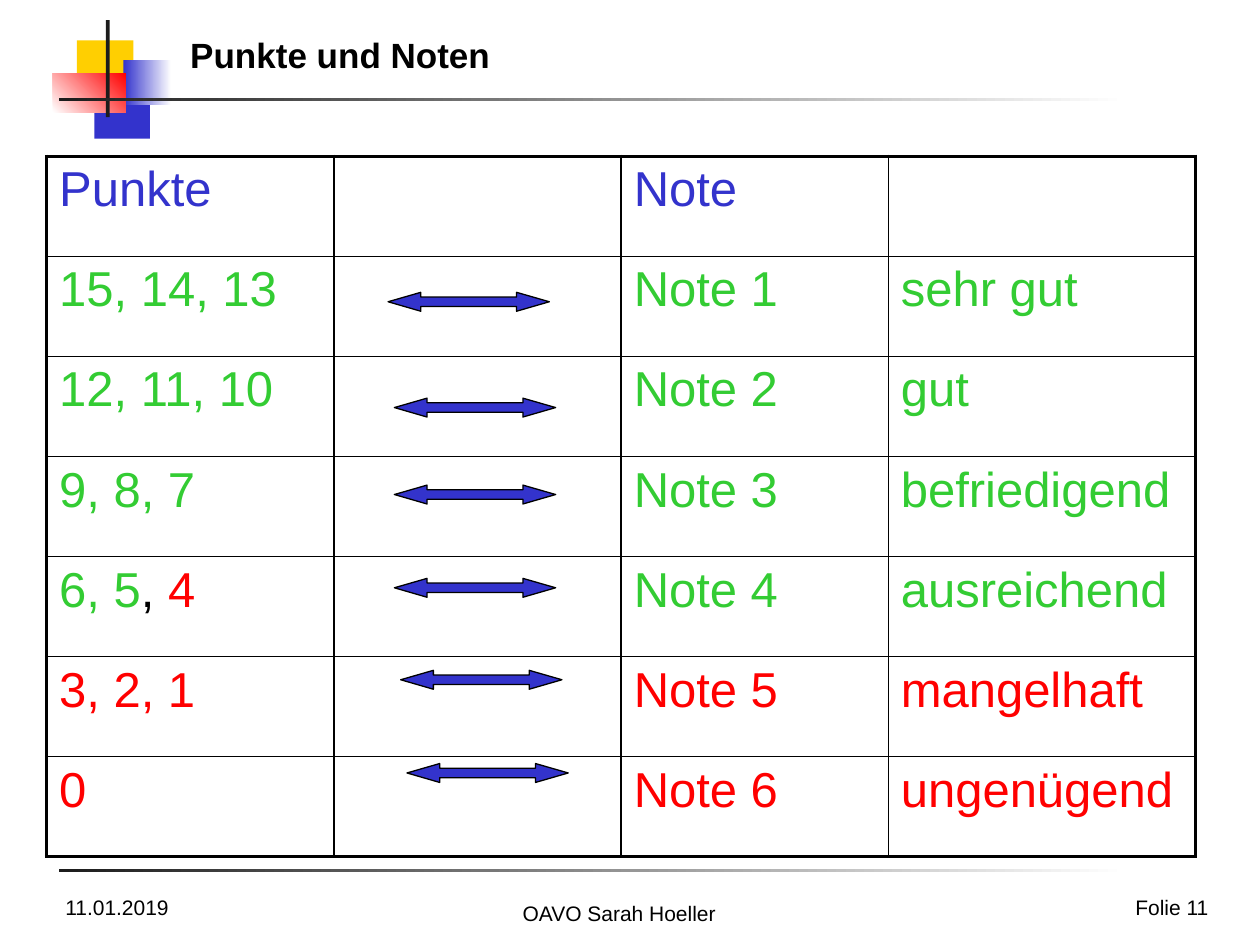
from dataclasses import dataclass
from typing import Optional

from lxml.etree import SubElement
from pptx import Presentation
from pptx.dml.color import RGBColor as RGB
from pptx.enum.shapes import MSO_SHAPE as Shape
from pptx.enum.text import MSO_ANCHOR as Anchor, PP_ALIGN as Align
from pptx.oxml.ns import qn
from pptx.util import Inches, Pt


@dataclass(frozen=True)
class Theme:
    font: str = "Arial"
    black: str = "000000"
    dark: str = "1C1C1C"
    white: str = "FFFFFF"
    yellow: str = "FFCF01"
    blue: str = "3333CC"
    red: str = "FF0000"
    green: str = "33CC33"
    footer_size: float = 12
    title_size: float = 20
    table_size: float = 28
    outer_line: float = 2.25
    inner_line: float = 1


@dataclass(frozen=True)
class Block:
    left: float
    top: float
    width: float
    height: float
    color: str
    fade_to: Optional[str] = None
    angle: float = 0


@dataclass(frozen=True)
class Footer:
    text: str
    left: float
    top: float
    width: float
    height: float
    align: Align


@dataclass(frozen=True)
class Grade:
    points: list
    note: str
    label: str
    color: str
    arrow_left: float
    arrow_top: float


T = Theme()

BLOCKS = [
    Block(0.61, 0.32, 0.45, 0.35, T.yellow),
    Block(0.85, 0.72, 0.34, 0.35, T.yellow, T.white),
    Block(0.75, 0.75, 0.44, 0.35, T.blue),
    Block(0.98, 0.48, 0.38, 0.35, T.blue, T.white),
    Block(0.42, 0.58, 0.58, 0.31, T.white, T.red, 45),
    Block(0.84, 0.16, 0.03, 0.77, T.dark),
    *(Block(0.47, top, 8.47, 0.02, T.dark, T.white) for top in (0.78, 6.9)),
]

FOOTERS = [
    Footer("Folie 11", 7.36, 7.05, 2.33, 0.22, Align.RIGHT),
    Footer("11.01.2019", 0.42, 7.05, 2.33, 0.3, Align.LEFT),
    Footer("OAVO Sarah Hoeller", 3.33, 7.1, 3.17, 0.24, Align.CENTER),
]

GRADES = [
    Grade([("15, 14, 13", T.green)], "Note 1", "sehr gut", T.green, 3.08, 2.32),
    Grade([("12, 11, 10", T.green)], "Note 2", "gut", T.green, 3.13, 3.16),
    Grade([("9, 8, 7", T.green)], "Note 3", "befriedigend", T.green, 3.13, 3.85),
    Grade([("6, 5", T.green), (", ", T.black), ("4", T.red)],
          "Note 4", "ausreichend", T.green, 3.13, 4.59),
    Grade([("3, 2, 1", T.red)], "Note 5", "mangelhaft", T.red, 3.18, 5.32),
    Grade([("0", T.red)], "Note 6", "ungenügend", T.red, 3.23, 6.06),
]

TABLE_LEFT, TABLE_TOP, TABLE_HEIGHT = 0.37, 1.24, 5.56
COLUMNS = [2.28, 2.28, 2.12, 2.44]


def add_run(p, text: str, *, size: float, color: str = T.black,
            bold: bool = False, align: Align = Align.LEFT) -> None:
    p.alignment = align
    r = p.add_run()
    r.text = text
    r.font.name, r.font.size, r.font.bold = T.font, Pt(size), bold
    r.font.color.rgb = RGB.from_string(color)


def fill_solid(sp, color: str) -> None:
    sp.fill.solid()
    sp.fill.fore_color.rgb = RGB.from_string(color)


def draw_block(slide, b: Block) -> None:
    sp = slide.shapes.add_shape(Shape.RECTANGLE, Inches(b.left), Inches(b.top),
                                Inches(b.width), Inches(b.height))
    sp.shadow.inherit = False
    sp.line.fill.background()
    if b.fade_to is None:
        fill_solid(sp, b.color)
        return
    sp.fill.gradient()
    sp.fill.gradient_angle = b.angle
    for stop, color in zip(sp.fill.gradient_stops, (b.color, b.fade_to)):
        stop.color.rgb = RGB.from_string(color)


def draw_footer(slide, f: Footer) -> None:
    tf = slide.shapes.add_textbox(Inches(f.left), Inches(f.top),
                                  Inches(f.width), Inches(f.height)).text_frame
    tf.word_wrap = True
    add_run(tf.paragraphs[0], f.text, size=T.footer_size, align=f.align)


def draw_title(slide, text: str) -> None:
    sp = slide.shapes.title
    sp.left, sp.top, sp.width, sp.height = map(Inches, (1.41, 0.31, 7.19, 0.34))
    fill_solid(sp, T.white)
    sp.text_frame.vertical_anchor = Anchor.BOTTOM
    add_run(sp.text_frame.paragraphs[0], text, size=T.title_size, bold=True)


def set_borders(cell, outer: dict) -> None:
    """Draw all four sides; outer tells which lie on the table's edge."""
    for side, is_outer in outer.items():
        width = T.outer_line if is_outer else T.inner_line
        ln = SubElement(cell._tc.get_or_add_tcPr(), qn(f"a:ln{side}"), w=str(Pt(width)))
        SubElement(SubElement(ln, qn("a:solidFill")), qn("a:srgbClr"), val=T.black)


def draw_table(slide) -> None:
    rows = [[[("Punkte", T.blue)], [], [("Note", T.blue)], []]]
    rows += [[g.points, [], [(g.note, g.color)], [(g.label, g.color)]] for g in GRADES]
    table = slide.shapes.add_table(
        len(rows), len(COLUMNS), Inches(TABLE_LEFT), Inches(TABLE_TOP),
        Inches(sum(COLUMNS)), Inches(TABLE_HEIGHT)).table
    table.first_row = table.horz_banding = False
    for column, width in zip(table.columns, COLUMNS):
        column.width = Inches(width)
    for i, row in enumerate(rows):
        table.rows[i].height = Inches(TABLE_HEIGHT / len(rows))
        for j, runs in enumerate(row):
            cell = table.cell(i, j)
            set_borders(cell, {"L": j == 0, "R": j == len(COLUMNS) - 1,
                               "T": i == 0, "B": i == len(rows) - 1})
            cell.fill.background()
            for text, color in runs:
                add_run(cell.text_frame.paragraphs[0], text,
                        size=T.table_size, color=color)


def draw_arrow(slide, g: Grade) -> None:
    sp = slide.shapes.add_shape(Shape.LEFT_RIGHT_ARROW, Inches(g.arrow_left),
                                Inches(g.arrow_top), Inches(1.28), Inches(0.15))
    sp.adjustments[0], sp.adjustments[1] = 0.5, 1.73
    sp.shadow.inherit = False
    fill_solid(sp, T.blue)
    sp.line.color.rgb = RGB.from_string(T.black)
    sp.line.width = Pt(0.75)


def main() -> None:
    prs = Presentation()
    prs.slide_width, prs.slide_height = Inches(10), Inches(7.5)
    slide = prs.slides.add_slide(prs.slide_layouts[5])
    for block in BLOCKS:
        draw_block(slide, block)
    for footer in FOOTERS:
        draw_footer(slide, footer)
    draw_title(slide, "Punkte und Noten")
    draw_table(slide)
    for grade in GRADES:
        draw_arrow(slide, grade)
    prs.save("out.pptx")


if __name__ == "__main__":
    main()
